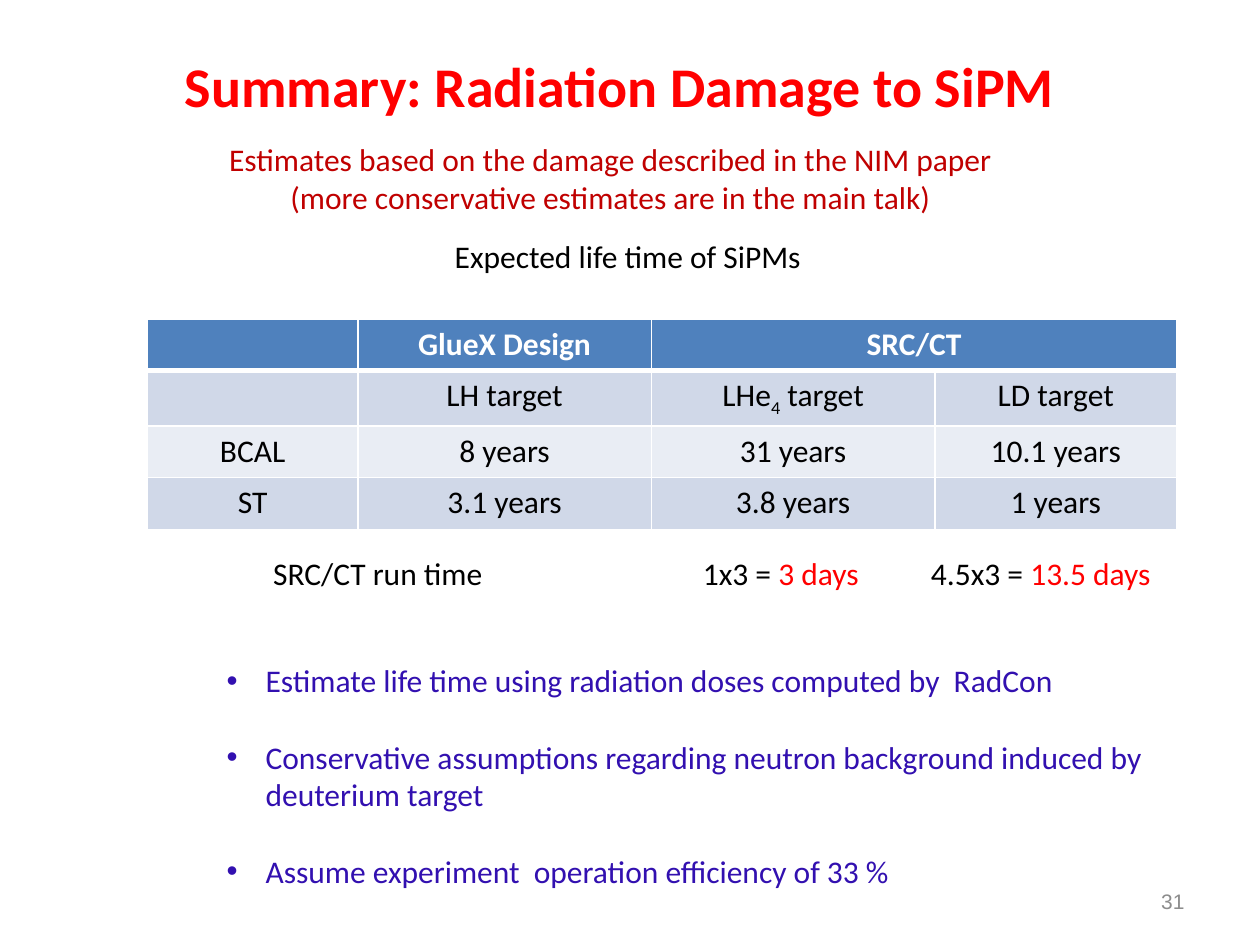
from lxml import etree
from pptx import Presentation
from pptx.dml.color import RGBColor
from pptx.enum.text import MSO_ANCHOR as Anchor, PP_ALIGN as Align
from pptx.oxml.ns import qn
from pptx.util import Inches, Pt

BLACK = RGBColor(0, 0, 0)
WHITE = RGBColor(255, 255, 255)
RED = RGBColor(255, 0, 0)
DARK_RED = RGBColor(0xC0, 0, 0)
INDIGO = RGBColor(0x32, 0x10, 0xB0)
GRAY = RGBColor(0x8C, 0x8C, 0x8C)
HEADER_FILL = RGBColor(0x4F, 0x81, 0xBD)
BAND_FILLS = [RGBColor(0xE9, 0xED, 0xF4), RGBColor(0xD0, 0xD8, 0xE8)]

TITLE = "Summary: Radiation Damage to SiPM"
SUBTITLE = ["Estimates based on the damage described in the NIM paper",
            "(more conservative estimates are in the main talk)"]
CAPTION = "Expected life time of SiPMs"
LIFETIMES = [
    ["", "GlueX Design", "SRC/CT", ""],
    ["", "LH target", [("LHe", {}), ("4", {"baseline": -25}), (" target", {})],
     "LD target"],
    ["BCAL", "8 years", "31 years", "10.1 years"],
    ["ST", "3.1 years", "3.8 years", "1 years"],
]
COLUMN_WIDTHS = [1.67, 2.33, 2.25, 1.92]
ROW_HEIGHT = 0.41
RUN_TIMES = [  # left, width, text
    (2.07, 1.9, "SRC/CT run time"),
    (5.48, 1.5, [("1x3 = ", {}), ("3 days", {"color": RED})]),
    (7.29, 2.06, [("4.5x3 = ", {}), ("13.5 days", {"color": RED})]),
]
BULLETS = [
    "Estimate life time using radiation doses computed by  RadCon",
    "Conservative assumptions regarding neutron background induced by "
    "deuterium target",
    "Assume experiment  operation efficiency of 33 %",
]


def write(paragraph, text, size=18, font="Calibri", color=BLACK, bold=False,
          align=Align.LEFT):
    """Fill a paragraph from a string or a list of (text, changes) runs."""
    paragraph.alignment = align
    paragraph.font.size = Pt(size)
    parts = [(text, {})] if isinstance(text, str) else text
    for part, changes in parts:
        if not part:
            continue
        run = paragraph.add_run()
        run.text = part
        run.font.name = font
        run.font.size = Pt(size)
        run.font.bold = bold
        run.font.color.rgb = changes.get("color", color)
        if "baseline" in changes:
            run.font._element.set("baseline", str(changes["baseline"] * 1000))


def add_text(slide, box, paragraphs, anchor=Anchor.TOP, wrap=True, **style):
    frame = slide.shapes.add_textbox(*map(Inches, box)).text_frame
    frame.word_wrap = wrap
    frame.vertical_anchor = anchor
    for index, text in enumerate(paragraphs):
        paragraph = frame.add_paragraph() if index else frame.paragraphs[0]
        write(paragraph, text, **style)
    return frame


def add_bullets(frame, indent, gap):
    for index, paragraph in enumerate(frame.paragraphs):
        if index:
            paragraph.space_before = gap
        properties = paragraph._p.get_or_add_pPr()
        properties.set("marL", str(indent))
        properties.set("indent", str(-indent))
        bullet_font = etree.Element(qn("a:buFont"), typeface="Arial")
        bullet = etree.Element(qn("a:buChar"), char="•")
        properties.insert_element_before(bullet_font, "a:tabLst", "a:defRPr")
        properties.insert_element_before(bullet, "a:tabLst", "a:defRPr")


def set_borders(cell, widths):
    """Draw white borders; widths are points for left, right, top, bottom."""
    properties = cell._tc.get_or_add_tcPr()
    for index, (side, width) in enumerate(zip("LRTB", widths)):
        line = etree.Element(qn(f"a:ln{side}"), w=str(Pt(width)))
        fill = etree.SubElement(line, qn("a:solidFill"))
        etree.SubElement(fill, qn("a:srgbClr"), val=str(WHITE))
        properties.insert(index, line)


def add_lifetime_table(slide, left, top):
    rows, columns = len(LIFETIMES), len(COLUMN_WIDTHS)
    table = slide.shapes.add_table(
        rows, columns, Inches(left), Inches(top),
        Inches(sum(COLUMN_WIDTHS)), Inches(rows * ROW_HEIGHT)).table
    for column, width in zip(table.columns, COLUMN_WIDTHS):
        column.width = Inches(width)
    for row_index, row in enumerate(LIFETIMES):
        table.rows[row_index].height = Inches(ROW_HEIGHT)
        header = row_index == 0
        for column_index, text in enumerate(row):
            cell = table.cell(row_index, column_index)
            cell.fill.solid()
            cell.fill.fore_color.rgb = (
                HEADER_FILL if header else BAND_FILLS[row_index % 2])
            top_width = 3 if row_index == 1 else 1
            set_borders(cell, (1, 1, top_width, 3 if header else 1))
            write(cell.text_frame.paragraphs[0], text, bold=header,
                  color=WHITE if header else BLACK, align=Align.CENTER)
    table.cell(0, 2).merge(table.cell(0, 3))


def main():
    presentation = Presentation()
    presentation.slide_width = Inches(10)
    presentation.slide_height = Inches(7.5)
    slide = presentation.slides.add_slide(presentation.slide_layouts[6])

    add_text(slide, (0.67, 0.26, 8.5, 0.83), [TITLE], anchor=Anchor.MIDDLE,
             size=32, color=RED, bold=True, align=Align.CENTER)
    add_text(slide, (1.19, 1.06, 7.31, 0.71), SUBTITLE, color=DARK_RED,
             align=Align.CENTER)
    add_text(slide, (3.51, 1.83, 2.98, 0.4), [CAPTION], wrap=False)
    add_lifetime_table(slide, 1.17, 2.53)
    for left, width, text in RUN_TIMES:
        add_text(slide, (left, 4.35, width, 0.4), [text], wrap=False)
    bullets = add_text(slide, (1.7, 5.2, 7.47, 1.92), BULLETS, color=INDIGO)
    add_bullets(bullets, indent=Inches(0.31), gap=Pt(22))
    add_text(slide, (7.17, 6.95, 2.33, 0.4), ["31"], anchor=Anchor.MIDDLE,
             size=12, font="Arial", color=GRAY, align=Align.RIGHT)
    presentation.save("out.pptx")


if __name__ == "__main__":
    main()
